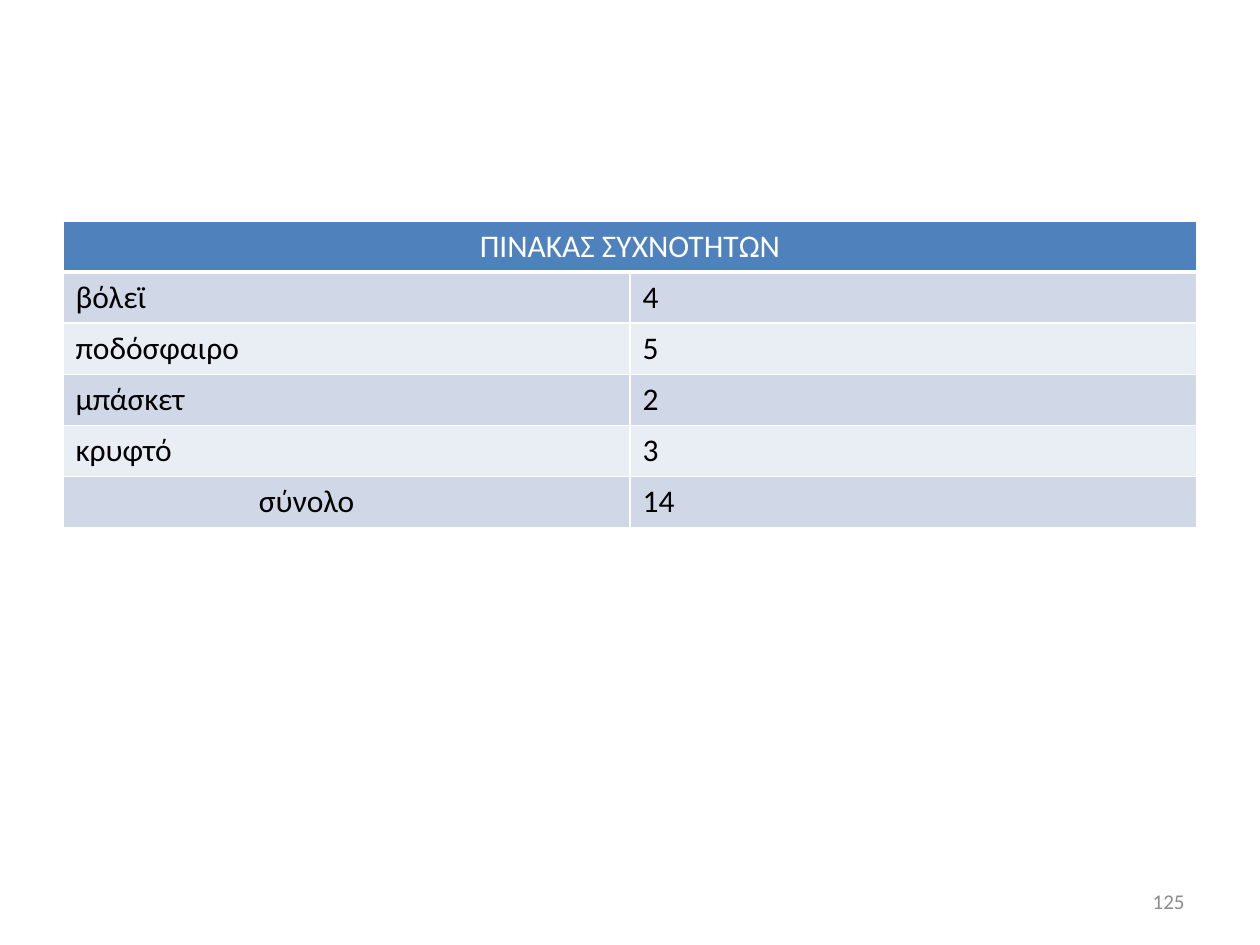
from lxml import etree
from pptx import Presentation
from pptx import util as u
from pptx.dml.color import RGBColor
from pptx.enum import text
from pptx.oxml.ns import qn

WHITE = RGBColor(0xFF, 0xFF, 0xFF)
BLACK = RGBColor(0x00, 0x00, 0x00)
GREY = RGBColor(0x8C, 0x8C, 0x8C)
HEADER_BLUE = RGBColor(0x4F, 0x81, 0xBD)
BANDS = (RGBColor(0xD0, 0xD8, 0xE8), RGBColor(0xE9, 0xED, 0xF4))

PX_PER_INCH = 126
ROW_HEIGHT = 51
COLUMN_WIDTH = 567
TOTAL_INDENT = 196

TITLE = "ΠΙΝΑΚΑΣ ΣΥΧΝΟΤΗΤΩΝ"
FREQUENCIES = [
    ("βόλεϊ", "4"),
    ("ποδόσφαιρο", "5"),
    ("μπάσκετ", "2"),
    ("κρυφτό", "3"),
    ("σύνολο", "14"),
]


def px(length):
    return u.Emu(round(length * u.Inches(1) / PX_PER_INCH))


class SlideBuilder:
    def __init__(self, page, font="Calibri"):
        self.page = page
        self.font = font

    def set_text(self, frame, words, size, color, align=text.PP_ALIGN.LEFT):
        para = frame.paragraphs[0]
        para.text = words
        para.alignment = align
        para.font.name = self.font
        para.font.size = u.Pt(size)
        para.font.color.rgb = color

    def text_box(self, left, top, width, height, words, size, color, align):
        box = self.page.shapes.add_textbox(px(left), px(top), px(width), px(height))
        frame = box.text_frame
        frame.word_wrap = True
        frame.vertical_anchor = text.MSO_ANCHOR.MIDDLE
        self.set_text(frame, words, size, color, align)

    def style_cell(self, cell, fill, bottom=1):
        """Borders go in before the fill, as the cell schema orders them."""
        properties = cell._tc.get_or_add_tcPr()
        for tag, points in (("lnL", 1), ("lnR", 1), ("lnT", 1), ("lnB", bottom)):
            line = etree.SubElement(properties, qn(f"a:{tag}"), w=str(int(u.Pt(points))))
            solid = etree.SubElement(line, qn("a:solidFill"))
            etree.SubElement(solid, qn("a:srgbClr"), val=str(WHITE))
        cell.fill.solid()
        cell.fill.fore_color.rgb = fill

    def frequency_table(self, left, top, title, rows):
        count = len(rows) + 1
        table = self.page.shapes.add_table(
            count, 2, px(left), px(top), px(2 * COLUMN_WIDTH), px(count * ROW_HEIGHT)
        ).table
        for column in table.columns:
            column.width = px(COLUMN_WIDTH)
        for row in table.rows:
            row.height = px(ROW_HEIGHT)

        header = table.cell(0, 0)
        header.merge(table.cell(0, 1))
        for cell in table.rows[0].cells:
            self.style_cell(cell, HEADER_BLUE, bottom=3)
        self.set_text(header.text_frame, title, 18, WHITE, text.PP_ALIGN.CENTER)

        for index, values in enumerate(rows):
            for cell, value in zip(table.rows[index + 1].cells, values):
                self.style_cell(cell, BANDS[index % 2])
                self.set_text(cell.text_frame, value, 18, BLACK)
        table.cell(count - 1, 0).margin_left = px(TOTAL_INDENT)


def main():
    deck = Presentation()
    deck.slide_width = u.Inches(10)
    deck.slide_height = u.Inches(7.5)
    builder = SlideBuilder(deck.slides.add_slide(deck.slide_layouts[6]))
    builder.frequency_table(63, 221, TITLE, FREQUENCIES)
    builder.text_box(903, 876, 294, 50, "125", 12, GREY, text.PP_ALIGN.RIGHT)
    deck.save("out.pptx")


if __name__ == "__main__":
    main()
